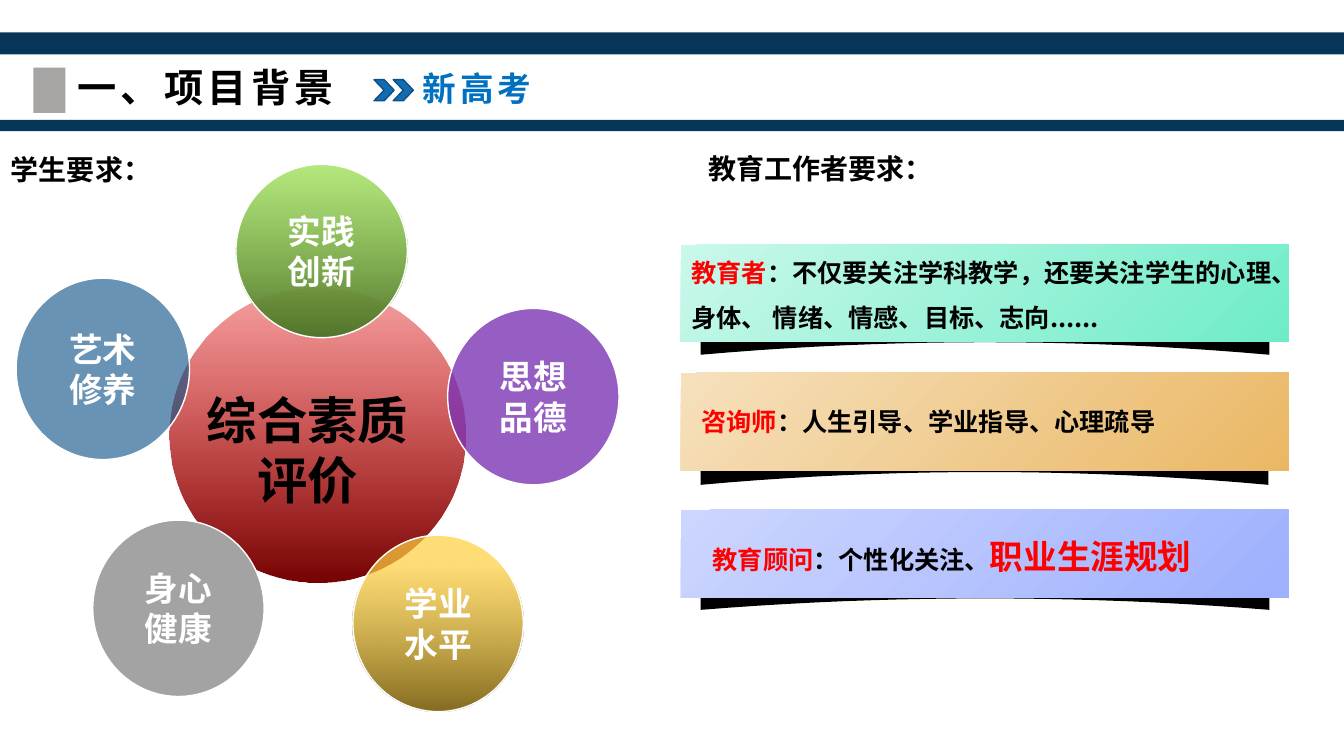
"""Build the project background slide on the new college entrance exam."""
from dataclasses import dataclass

from pptx import Presentation
from pptx.dml.color import RGBColor
from pptx.enum.shapes import MSO_SHAPE
from pptx.enum.text import MSO_ANCHOR, MSO_AUTO_SIZE, PP_ALIGN
from pptx.oxml import parse_xml
from pptx.oxml.ns import nsdecls, qn
from pptx.util import Inches, Pt

RECT, OVAL, CHEVRON = MSO_SHAPE.RECTANGLE, MSO_SHAPE.OVAL, MSO_SHAPE.CHEVRON
LEFT, CENTER = PP_ALIGN.LEFT, PP_ALIGN.CENTER
TOP, MIDDLE = MSO_ANCHOR.TOP, MSO_ANCHOR.MIDDLE
FONT = "Noto Sans CJK SC"
COLORS = {
    "black": "000000", "white": "FFFFFF", "red": "FF0000",
    "navy": "083659", "grey": "767171", "blue": "0070C0",
    "arrow": "116CB2", "arrow_edge": "0D5084",
    "crimson": "E30000", "maroon": "760303", "steel": "0D5186",
    "lime": "9EE256", "moss": "52762D", "gold": "FECF40", "bronze": "846C21",
    "purple": "7B32B2", "silver": "A3A3A3",
    "mint": "CAF8EB", "teal": "6EECC8", "cream": "F6E1BD", "amber": "EAB764",
    "pale_blue": "CDD6FE", "periwinkle": "9EB0FE",
}


@dataclass
class Stop:
    """One colour of a fill, with opacity and position in percent."""
    color: str
    alpha: int = 100
    pos: int = 0


@dataclass
class Run:
    """A stretch of text in one style."""
    text: str
    size: int
    color: str = "black"


@dataclass
class Box:
    """Position and size in inches."""
    x: float
    y: float
    w: float
    h: float

    def emu(self) -> list:
        """Return the four lengths as Inches."""
        return [Inches(v) for v in (self.x, self.y, self.w, self.h)]


@dataclass
class Bubble:
    """A circle naming one quality."""
    box: Box
    lines: list[str]
    stops: list[Stop]


@dataclass
class Card:
    """A requirement card and the curved shadow under it."""
    box: Box
    shadow: Box
    stops: list[Stop]


@dataclass
class Label:
    """A free text, as paragraphs of runs."""
    box: Box
    lines: list[list[Run]]
    spacing: float = 1
    tracking: int = 0
    align: PP_ALIGN = LEFT
    wrap: bool = True


def rgb(name: str) -> RGBColor:
    """Return the named colour."""
    return RGBColor.from_string(COLORS[name])


def paint(sp, stops: list[Stop], angle: int = 90, edge: str = "") -> None:
    """Fill a shape with one colour or a gradient, and set its outline."""
    sp.shadow.inherit = False
    if len(stops) == 1:
        sp.fill.solid()
        sp.fill.fore_color.rgb = rgb(stops[0].color)
    else:
        sp.fill.gradient()
        sp.fill.gradient_angle = 360 - angle
        for target, stop in zip(sp.fill.gradient_stops, stops):
            target.color.rgb = rgb(stop.color)
            target.position = stop.pos / 100
    for clr, stop in zip(list(sp._element.spPr.iter(qn("a:srgbClr"))), stops):
        if stop.alpha < 100:
            clr.append(parse_xml(f'<a:alpha {nsdecls("a")} val="{stop.alpha * 1000}"/>'))
    if edge:
        sp.line.color.rgb = rgb(edge)
        sp.line.width = Pt(1)
    else:
        sp.line.fill.background()


def write(sp, lines: list[list[Run]], align: PP_ALIGN = LEFT, anchor: MSO_ANCHOR = TOP,
          spacing: float = 1, tracking: int = 0, wrap: bool = True) -> None:
    """Write bold paragraphs into a shape."""
    tf = sp.text_frame
    tf.auto_size = MSO_AUTO_SIZE.NONE
    tf.word_wrap = wrap
    tf.vertical_anchor = anchor
    tf.text = "\n".join("" for _ in lines)
    for p, runs in zip(tf.paragraphs, lines):
        p.alignment = align
        p.line_spacing = spacing
        for run in runs:
            r = p.add_run()
            r.text = run.text
            r.font.size = Pt(run.size)
            r.font.bold = True
            r.font.name = FONT
            r.font.color.rgb = rgb(run.color)
            rpr = r.font._element
            rpr.append(parse_xml(f'<a:ea {nsdecls("a")} typeface="{FONT}"/>'))
            if tracking:
                rpr.set("spc", str(tracking * 100))


def add_shape(s, kind: MSO_SHAPE, box: Box, stops: list[Stop], angle: int = 90, edge: str = ""):
    """Add a painted preset shape."""
    sp = s.shapes.add_shape(kind, *box.emu())
    paint(sp, stops, angle, edge)
    return sp


def add_label(s, label: Label):
    """Add a text box."""
    sp = s.shapes.add_textbox(*label.box.emu())
    write(sp, label.lines, label.align, TOP, label.spacing, label.tracking, label.wrap)
    return sp


def add_bubble(s, bubble: Bubble) -> None:
    """Add a circle with white centred text."""
    sp = add_shape(s, OVAL, bubble.box, bubble.stops, edge="white")
    write(sp, [[Run(t, 24, "white")] for t in bubble.lines], CENTER, MIDDLE)


def add_card(s, card: Card, steps: int = 20) -> None:
    """Add a card over a black shadow whose lower edge is a parabola."""
    b = card.shadow
    mid, bottom, shoulder = b.x + b.w / 2, b.y + b.h, b.y + 0.24 * b.h
    ts = [1 - 2 * i / steps for i in range(steps + 1)]
    points = [(mid + t * b.w / 2, bottom - 0.27 * b.h * (1 - t * t)) for t in ts]
    points += [(b.x, shoulder), (mid, b.y), (b.x + b.w, shoulder)]
    first, *rest = [(Inches(x), Inches(y)) for x, y in points]
    builder = s.shapes.build_freeform(*first)
    builder.add_line_segments(rest, close=True)
    paint(builder.convert_to_shape(), [Stop("black")])
    add_shape(s, RECT, card.box, card.stops, 45)


BUBBLES = [
    Bubble(Box(0.16, 2.76, 1.72, 1.8), ["艺术", "修养"], [Stop("steel", 62)]),
    Bubble(Box(2.34, 1.63, 1.7, 1.72), ["实践", "创新"], [Stop("lime", 77), Stop("moss", pos=100)]),
    Bubble(Box(3.5, 5.31, 1.69, 1.75), ["学业水平"], [Stop("gold", 71, 17), Stop("bronze", pos=100)]),
    Bubble(Box(4.44, 3.06, 1.7, 1.75), ["思想", "品德"], [Stop("purple", 79)]),
    Bubble(Box(0.92, 5.16, 1.7, 1.75), ["身心", "健康"], [Stop("silver")]),
]
CARDS = [
    Card(Box(6.75, 2.43, 6.03, 0.96), Box(6.95, 3.06, 5.64, 0.46), [Stop("mint"), Stop("teal", pos=100)]),
    Card(Box(6.75, 3.7, 6.03, 0.97), Box(6.95, 4.34, 5.63, 0.47), [Stop("cream"), Stop("amber", pos=100)]),
    Card(Box(6.75, 5.06, 6.03, 0.87), Box(6.95, 5.63, 5.64, 0.42),
         [Stop("pale_blue"), Stop("periwinkle", pos=100)]),
]
CORE = Label(Box(1.88, 3.81, 2.34, 1.31), [[Run("综合素质", 36)], [Run("评价", 36)]], align=CENTER)
LABELS = [
    Label(Box(4.09, 0.62, 5.21, 0.5), [[Run("新高考", 24, "blue")]], tracking=3),
    Label(Box(0.01, 1.3, 1.77, 1.21), [[Run("学生要求：", 20)]], 1.5),
    Label(Box(6.93, 1.29, 3.39, 0.6), [[Run("教育工作者要求：", 20)]], 1.5),
    Label(Box(6.76, 2.35, 6.02, 1.01),
          [[Run("教育者", 18, "red"), Run("：不仅要关注学科教学，还要关注学生的心理、", 18)],
           [Run("身体、 情绪、情感、目标、志向......", 18)]], 1.5),
    Label(Box(6.86, 3.98, 4.7, 0.4),
          [[Run("咨询师", 18, "red"), Run("：人生引导、学业指导、心理疏导", 18)]], wrap=False),
    Label(Box(6.97, 5.27, 4.95, 0.5),
          [[Run("教育顾问", 18, "red"), Run("：个性化关注、", 18), Run("职业生涯规划", 24, "red")]], wrap=False),
]


def main() -> None:
    """Draw the slide and save it."""
    prs = Presentation()
    prs.slide_width, prs.slide_height = Inches(13.33), Inches(7.5)
    s = prs.slides.add_slide(prs.slide_layouts[5])
    title = s.shapes.title
    title.left, title.top, title.width, title.height = Box(0.67, 0.58, 4.24, 0.57).emu()
    write(title, [[Run("一、项目背景", 28)]], tracking=3)
    for y, h in ((1.19, 0.11), (0.32, 0.22)):
        add_shape(s, RECT, Box(-0.06, y, 13.45, h), [Stop("navy")])
    add_shape(s, RECT, Box(0.33, 0.67, 0.32, 0.45), [Stop("grey", 64)])
    for x in (3.9, 3.71):
        add_shape(s, CHEVRON, Box(x, 0.79, 0.2, 0.21), [Stop("arrow")], edge="arrow_edge")
    add_shape(s, OVAL, Box(1.68, 2.85, 2.94, 2.93), [Stop("crimson", 37), Stop("maroon", pos=100)])
    core = add_label(s, CORE)
    for p in core.text_frame.paragraphs:
        for r in p.runs:
            r.font._element.insert(0, parse_xml(
                f'<a:ln {nsdecls("a")} w="{Pt(0.75)}"><a:solidFill>'
                f'<a:srgbClr val="{COLORS["white"]}"/></a:solidFill></a:ln>'))
    for bubble in BUBBLES:
        add_bubble(s, bubble)
    for card in CARDS:
        add_card(s, card)
    for label in LABELS:
        add_label(s, label)
    prs.save("out.pptx")


if __name__ == "__main__":
    main()
